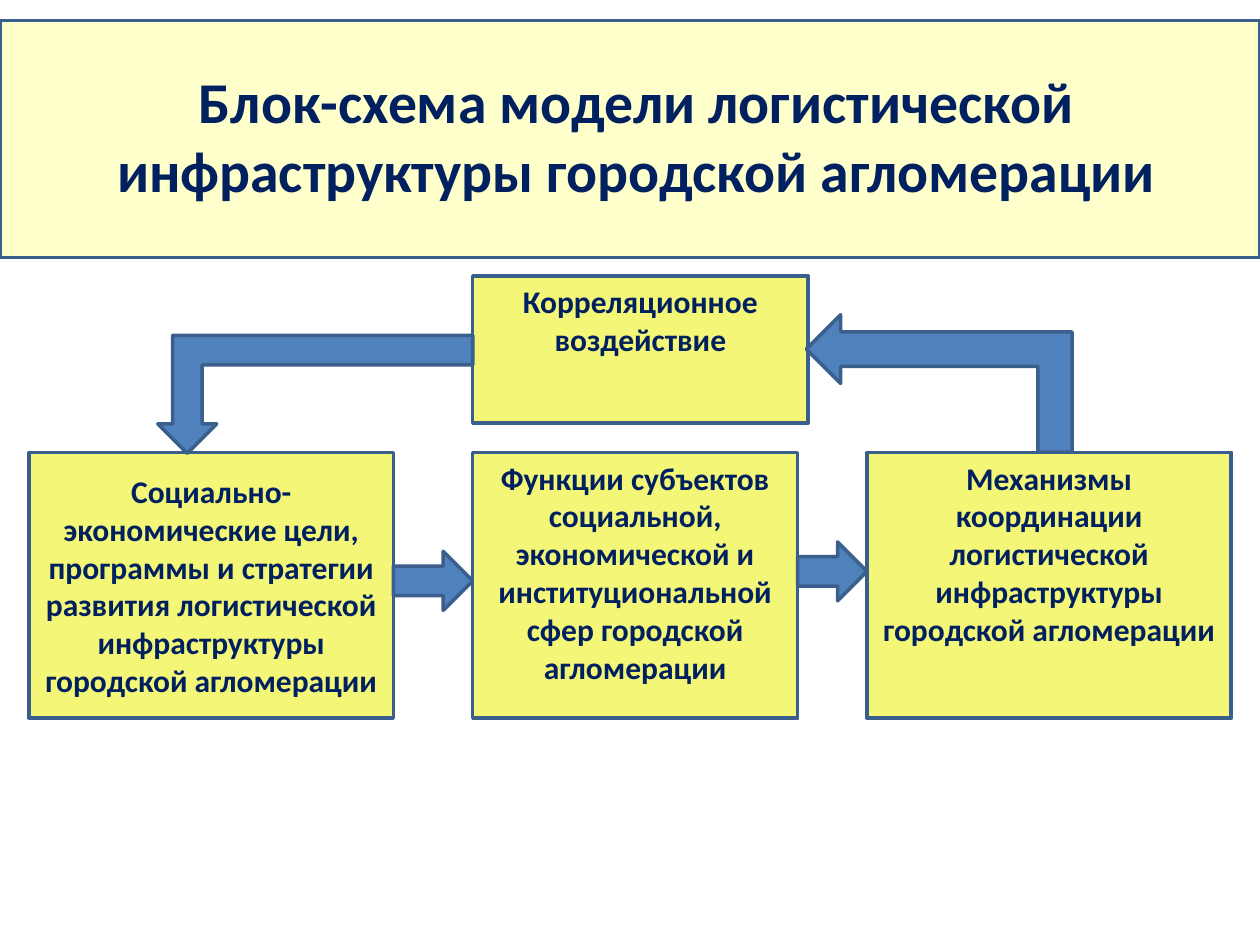
from pptx import Presentation
from pptx.dml.color import RGBColor
from pptx.enum.shapes import MSO_SHAPE
from pptx.enum.text import MSO_ANCHOR, MSO_AUTO_SIZE, PP_ALIGN
from pptx.util import Cm, Pt

NAVY = RGBColor(0x00, 0x20, 0x60)
CREAM = RGBColor(0xFF, 0xFF, 0xCC)
YELLOW = RGBColor(0xF3, 0xF6, 0x76)
BLUE = RGBColor(0x4F, 0x81, 0xBD)
OUTLINE = RGBColor(0x3A, 0x5F, 0x8C)

TITLE = "Блок-схема модели логистической инфраструктуры городской агломерации"

# Lower row, left to right: text, left, width, anchor
ROW_TOP, ROW_HEIGHT = 9.12, 5.36
STAGES = [
    ("Социально-экономические цели, программы и стратегии развития "
     "логистической инфраструктуры городской агломерации",
     0.59, 7.34, MSO_ANCHOR.MIDDLE),
    ("Функции субъектов социальной, экономической и институциональной "
     "сфер городской агломерации",
     9.53, 6.55, MSO_ANCHOR.TOP),
    ("Механизмы координации логистической инфраструктуры "
     "городской агломерации",
     17.48, 7.34, MSO_ANCHOR.TOP),
]
ARROW_HEIGHT = 1.19
ARROW_CENTRES = [11.71, 11.52]

FEEDBACK = "Корреляционное воздействие"
FEEDBACK_BOX = (9.53, 5.56, 6.76, 2.97)

# Feedback arrows: left, top, width, height before turning, rotation
BENT_ARROWS = [
    (17.55, 5.05, 2.77, 5.36, 270),
    (3.18, 6.76, 6.35, 2.38, 180),
]


def add_outlined(slide, kind, box, fill):
    shape = slide.shapes.add_shape(kind, *(Cm(length) for length in box))
    shape.shadow.inherit = False
    shape.fill.solid()
    shape.fill.fore_color.rgb = fill
    shape.line.color.rgb = OUTLINE
    shape.line.width = Pt(2)
    return shape


def write_centred(shape, text, size, anchor=MSO_ANCHOR.TOP):
    frame = shape.text_frame
    frame.text = text
    frame.word_wrap = True
    frame.auto_size = MSO_AUTO_SIZE.NONE
    frame.vertical_anchor = anchor
    paragraph = frame.paragraphs[0]
    paragraph.alignment = PP_ALIGN.CENTER
    paragraph.font.name = "Calibri"
    paragraph.font.size = Pt(size)
    paragraph.font.bold = True
    paragraph.font.color.rgb = NAVY


def add_process(slide, text, box, anchor=MSO_ANCHOR.TOP):
    shape = add_outlined(slide, MSO_SHAPE.FLOWCHART_PROCESS, box, YELLOW)
    write_centred(shape, text, 18, anchor)


def add_title(slide):
    banner = add_outlined(slide, MSO_SHAPE.RECTANGLE, (0, 0.41, 25.4, 4.78), CREAM)
    title = slide.shapes.title
    title.element.addprevious(banner.element)  # banner lies behind the title
    title.left, title.top = Cm(1.4), Cm(1.19)
    title.width, title.height = Cm(22.86), Cm(3.81)
    title.line.color.rgb = CREAM
    title.line.width = Pt(0.75)
    write_centred(title, TITLE, 33)


def main():
    presentation = Presentation()
    presentation.slide_width, presentation.slide_height = Cm(25.4), Cm(19.05)
    slide = presentation.slides.add_slide(presentation.slide_layouts[5])

    add_title(slide)
    for text, left, width, anchor in STAGES:
        add_process(slide, text, (left, ROW_TOP, width, ROW_HEIGHT), anchor)
    add_process(slide, FEEDBACK, FEEDBACK_BOX)

    for stage, following, centre in zip(STAGES, STAGES[1:], ARROW_CENTRES):
        start = stage[1] + stage[2]
        box = (start, centre - ARROW_HEIGHT / 2, following[1] - start, ARROW_HEIGHT)
        add_outlined(slide, MSO_SHAPE.RIGHT_ARROW, box, BLUE)

    for *box, rotation in BENT_ARROWS:
        arrow = add_outlined(slide, MSO_SHAPE.BENT_UP_ARROW, box, BLUE)
        arrow.rotation = rotation

    presentation.save("out.pptx")


if __name__ == "__main__":
    main()
